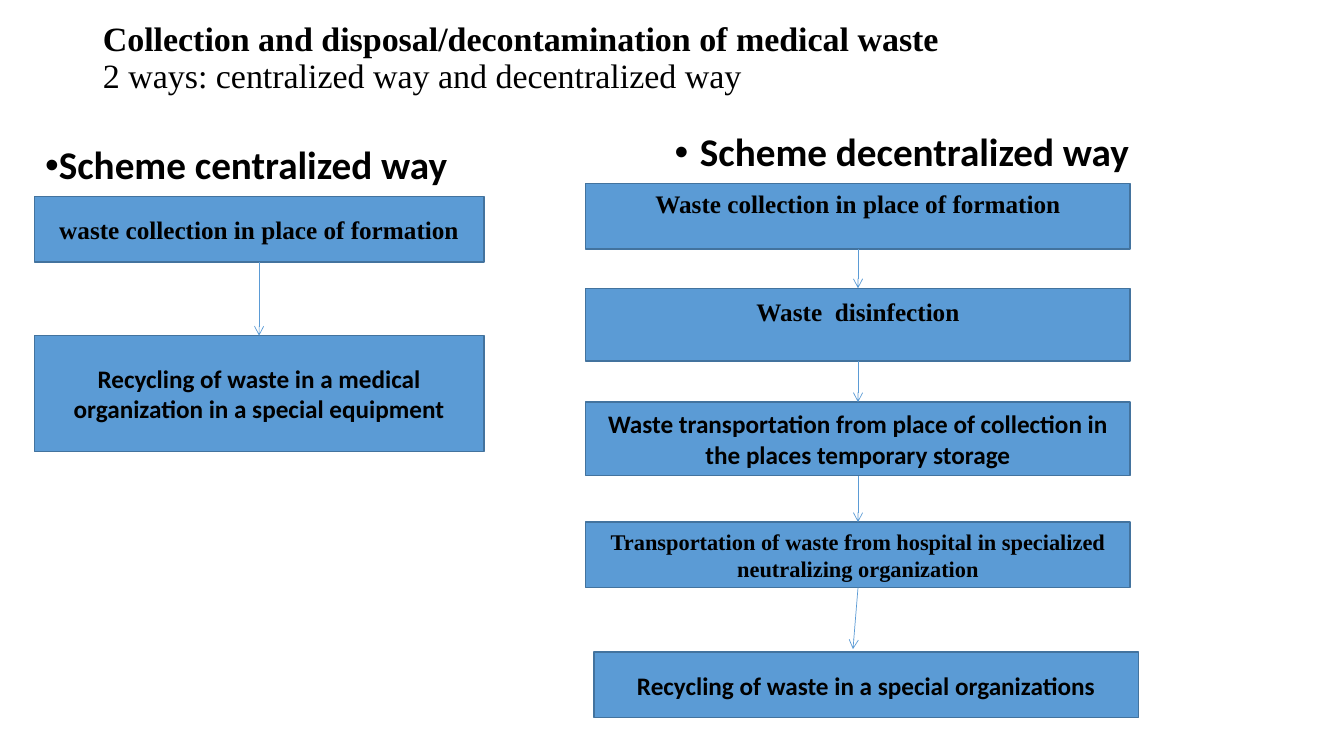
from dataclasses import dataclass

from lxml.etree import SubElement
from pptx import Presentation
from pptx.dml.color import RGBColor
from pptx.enum.shapes import MSO_CONNECTOR as Connector, MSO_SHAPE as Shape
from pptx.enum.text import MSO_ANCHOR as Anchor, MSO_AUTO_SIZE as AutoSize, PP_ALIGN as Align
from pptx.oxml.ns import qn
from pptx.slide import Slide
from pptx.text.text import _Paragraph as Paragraph
from pptx.util import Inches, Pt


@dataclass(frozen=True)
class Theme:
    fill: RGBColor = RGBColor(0x5B, 0x9B, 0xD5)
    border: RGBColor = RGBColor(0x43, 0x73, 0x9E)
    text: RGBColor = RGBColor(0, 0, 0)
    serif: str = "Times New Roman"
    sans: str = "Calibri"
    title: float = 24.3
    heading: float = 28
    step: float = 18
    small: float = 16


THEME = Theme()


@dataclass(frozen=True)
class Heading:
    text: str
    left: float
    top: float
    width: float
    height: float
    align: Align
    hanging: float


@dataclass(frozen=True)
class Step:
    text: str
    left: float
    top: float
    width: float
    height: float
    font: str
    size: float = THEME.step
    anchor: Anchor = Anchor.MIDDLE
    inset: float = 0.05

    @property
    def center(self) -> float:
        return self.left + self.width / 2

    @property
    def bottom(self) -> float:
        return self.top + self.height


TITLE = (
    ("Collection and disposal/decontamination of medical waste", True),
    ("2 ways: centralized way and decentralized way", False),
)
HEADINGS = (
    Heading("Scheme centralized way", 0.35, 1.4, 4.51, 5.36, Align.LEFT, 0),
    Heading("Scheme decentralized way", 4.83, 1.27, 8.23, 5.48, Align.CENTER, 0.25),
)
CENTRALIZED = (
    Step("waste collection in place of formation", 0.34, 1.95, 4.46, 0.65, THEME.serif),
    Step("Recycling of waste in a medical organization in a special equipment",
         0.34, 3.33, 4.46, 1.15, THEME.sans),
)
DECENTRALIZED = (
    Step("Waste collection in place of formation", 5.81, 1.82, 5.4, 0.65, THEME.serif,
         anchor=Anchor.TOP),
    Step("Waste  disinfection", 5.81, 2.86, 5.4, 0.72, THEME.serif,
         anchor=Anchor.TOP, inset=0.08),
    Step("Waste transportation from place of collection in the places temporary storage",
         5.81, 3.99, 5.4, 0.73, THEME.sans),
    Step("Transportation of waste from hospital in specialized neutralizing organization",
         5.81, 5.18, 5.4, 0.65, THEME.serif, THEME.small),
)
RECYCLING = Step("Recycling of waste in a special organizations",
                 5.89, 6.47, 5.4, 0.65, THEME.sans)


def add_run(p: Paragraph, text: str, font: str, size: float, bold: bool = True) -> None:
    r = p.add_run()
    r.text = text
    r.font.name = font
    r.font.size = Pt(size)
    r.font.bold = bold
    r.font.color.rgb = THEME.text


def fill_title(s: Slide) -> None:
    sp = s.shapes.title
    sp.left, sp.top, sp.width, sp.height = map(Inches, (0.92, 0.25, 11.5, 0.67))
    tf = sp.text_frame
    tf.auto_size = AutoSize.NONE
    tf.word_wrap = True
    tf.vertical_anchor = Anchor.MIDDLE
    p = tf.paragraphs[0]
    p.alignment = Align.LEFT
    p.line_spacing = 0.9
    for i, (text, bold) in enumerate(TITLE):
        if i:
            p.add_line_break()
        add_run(p, text, THEME.serif, THEME.title, bold)


def add_heading(s: Slide, h: Heading) -> None:
    sp = s.shapes.add_textbox(*map(Inches, (h.left, h.top, h.width, h.height)))
    tf = sp.text_frame
    tf.word_wrap = True
    p = tf.paragraphs[0]
    p.alignment = h.align
    p.line_spacing = 0.9
    p.space_before = Pt(10)
    add_run(p, h.text, THEME.sans, THEME.heading)
    props = p._p.get_or_add_pPr()
    props.set("marL", str(Inches(h.hanging)))
    props.set("indent", str(-Inches(h.hanging)))
    SubElement(props, qn("a:buFont"), typeface="Arial")
    SubElement(props, qn("a:buChar"), char="•")


def add_step(s: Slide, step: Step) -> None:
    sp = s.shapes.add_shape(
        Shape.RECTANGLE, *map(Inches, (step.left, step.top, step.width, step.height)))
    sp.shadow.inherit = False
    sp.fill.solid()
    sp.fill.fore_color.rgb = THEME.fill
    sp.line.color.rgb = THEME.border
    sp.line.width = Pt(1)
    tf = sp.text_frame
    tf.word_wrap = True
    tf.vertical_anchor = step.anchor
    tf.margin_top = Inches(step.inset)
    p = tf.paragraphs[0]
    p.alignment = Align.CENTER
    add_run(p, step.text, step.font, step.size)


def add_arrow(s: Slide, x1: float, y1: float, x2: float, y2: float) -> None:
    sp = s.shapes.add_connector(Connector.STRAIGHT, *map(Inches, (x1, y1, x2, y2)))
    sp.line.color.rgb = THEME.fill
    sp.line.width = Pt(0.5)
    SubElement(sp.line._get_or_add_ln(), qn("a:tailEnd"), type="arrow")
    SubElement(sp._element.spPr, qn("a:effectLst"))


def add_flow(s: Slide, steps: tuple[Step, ...]) -> None:
    for step in steps:
        add_step(s, step)
    for start, end in zip(steps, steps[1:]):
        add_arrow(s, start.center, start.bottom, end.center, end.top)


def main() -> None:
    prs = Presentation()
    prs.slide_width, prs.slide_height = Inches(13.33), Inches(7.5)
    s = prs.slides.add_slide(prs.slide_layouts[5])
    fill_title(s)
    for heading in HEADINGS:
        add_heading(s, heading)
    add_flow(s, CENTRALIZED)
    add_flow(s, DECENTRALIZED)
    add_step(s, RECYCLING)
    last = DECENTRALIZED[-1]
    add_arrow(s, last.center, last.bottom, 8.46, 6.44)
    prs.save("out.pptx")


if __name__ == "__main__":
    main()
